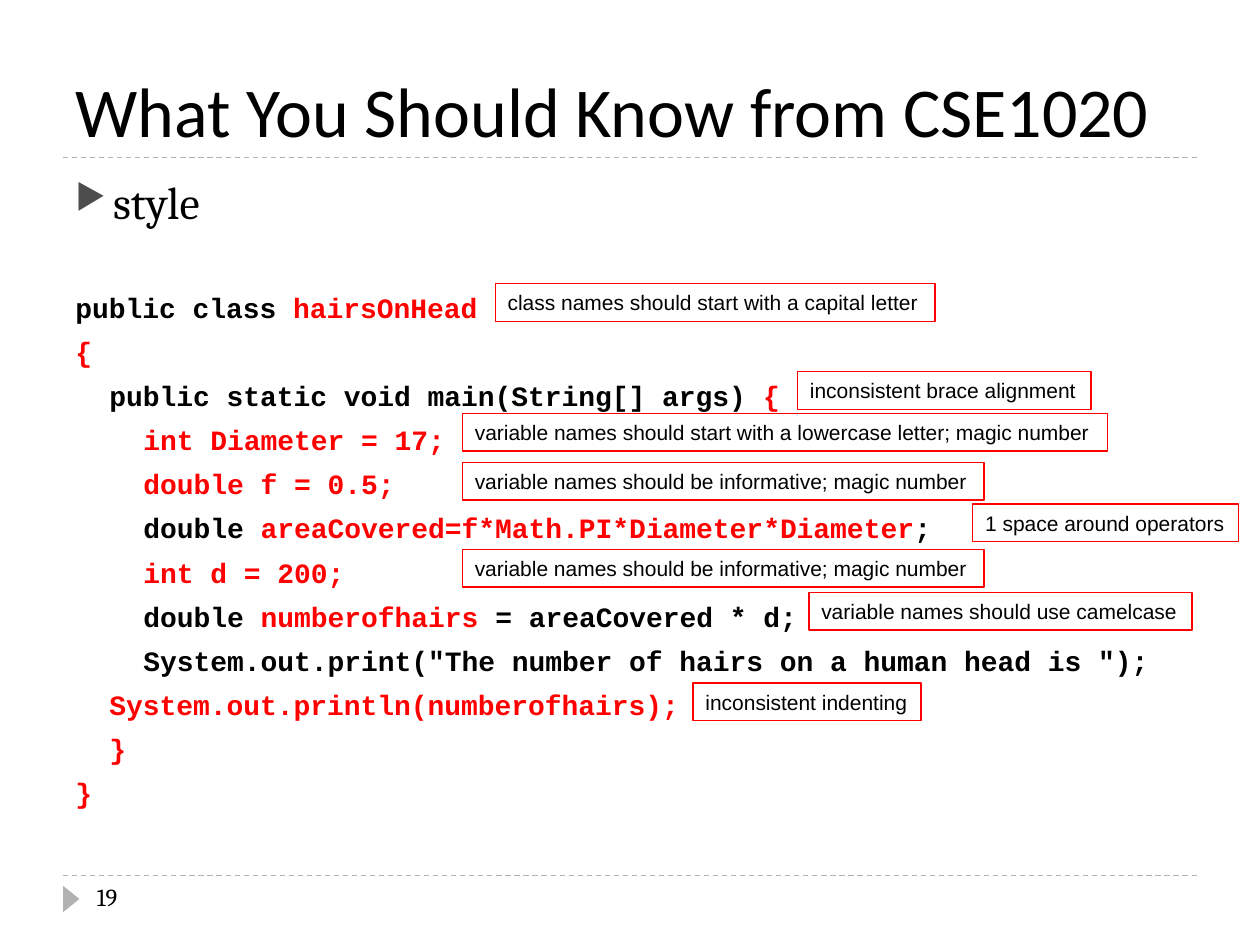
from lxml import etree
from pptx import Presentation
from pptx.dml.color import RGBColor
from pptx.enum.dml import MSO_LINE
from pptx.enum.shapes import MSO_CONNECTOR, MSO_SHAPE
from pptx.enum.text import MSO_ANCHOR, MSO_AUTO_SIZE, PP_ALIGN
from pptx.oxml.ns import qn
from pptx.util import Inches, Pt

DASH = MSO_LINE.DASH
LINE = MSO_CONNECTOR.STRAIGHT
RECT = MSO_SHAPE.RECTANGLE
TRIANGLE = MSO_SHAPE.ISOSCELES_TRIANGLE
LEFT = PP_ALIGN.LEFT

BLACK, RED, GREY, DARK = "000000", "FF0000", "B2B2B2", "4D4D4D"
TITLE = "What You Should Know from CSE1020"
TOPIC = "style"
PAGE = "19"

# Indent level, then text in turn black, red, black
CODE = [
    (0, "public class ", "hairsOnHead"),
    (0, "", "{"),
    (1, "public static void main(String[] args) ", "{"),
    (2, "", "int Diameter = 17;"),
    (2, "", "double f = 0.5;"),
    (2, "double ", "areaCovered=f*Math.PI*Diameter*Diameter", ";"),
    (2, "", "int d = 200;"),
    (2, "double ", "numberofhairs", " = areaCovered * d;"),
    (2, 'System.out.print("The number of hairs on a human head is ");'),
    (1, "", "System.out.println(numberofhairs);"),
    (1, "", "}"),
    (0, "", "}"),
]
VAGUE = "variable names should be informative; magic number"
# Left, top, width, text
NOTES = [
    (3.93, 2.25, 3.49, "class names should start with a capital letter"),
    (6.33, 2.95, 2.33, "inconsistent brace alignment"),
    (3.67, 3.28, 5.12,
     "variable names should start with a lowercase letter; magic number"),
    (3.67, 3.67, 4.14, VAGUE),
    (3.67, 4.36, 4.14, VAGUE),
    (6.42, 4.7, 3.04, "variable names should use camelcase"),
    (5.5, 5.42, 1.81, "inconsistent indenting"),
    (7.72, 4, 2.11, "1 space around operators"),
]
NOTE_H = 0.3
STEP = 0.27  # two characters of code
HANG = 0.3

TITLE_FONT = {"name": "Calibri", "size": Pt(40)}
TOPIC_FONT = {"name": "Cambria", "size": Pt(26)}
PAGE_FONT = {"name": "Cambria", "size": Pt(14)}
CODE_FONT = {"name": "Courier New", "size": Pt(16), "bold": True}
NOTE_FONT = {"name": "Arial", "size": Pt(12)}


def rgb(code):
    return RGBColor.from_string(code)


def box(*sides):
    return [Inches(side) for side in sides]


def write(para, text, font, color=BLACK):
    run = para.add_run()
    run.text = text
    for key, value in font.items():
        setattr(run.font, key, value)
    run.font.color.rgb = rgb(color)


def rule(slide, top):
    line = slide.shapes.add_connector(LINE, *box(0.5, top, 9.5, top))
    line.line.color.rgb = rgb(GREY)
    line.line.width = Pt(0.75)
    line.line.dash_style = DASH
    etree.SubElement(line._element.spPr, qn("a:effectLst"))


def bullet(para):
    props = para._p.get_or_add_pPr()
    props.set("marL", str(Inches(HANG)))
    props.set("indent", str(-Inches(HANG)))
    color = etree.SubElement(props, qn("a:buClr"))
    etree.SubElement(color, qn("a:srgbClr"), val=DARK)
    etree.SubElement(props, qn("a:buSzPct"), val="76000")
    etree.SubElement(props, qn("a:buChar"), char="▶")


def add_title(slide):
    title = slide.shapes.title
    title.left, title.top, title.width, title.height = box(0.5, 0.17, 9, 1.08)
    frame = title.text_frame
    frame.auto_size = MSO_AUTO_SIZE.NONE
    frame.vertical_anchor = MSO_ANCHOR.BOTTOM
    frame.paragraphs[0].alignment = LEFT
    write(frame.paragraphs[0], TITLE, TITLE_FONT)


def add_body(slide):
    frame = slide.shapes.add_textbox(*box(0.5, 1.33, 9, 5.4)).text_frame
    frame.word_wrap = True
    bullet(frame.paragraphs[0])
    write(frame.paragraphs[0], TOPIC, TOPIC_FONT)
    for row, (level, *parts) in enumerate(CODE):
        para = frame.add_paragraph()
        para.line_spacing = Pt(25.2)
        para.space_before = Pt(0 if row else 29.5)
        para._p.get_or_add_pPr().set("marL", str(Inches(level * STEP)))
        for part, color in zip(parts, (BLACK, RED, BLACK)):
            if part:
                write(para, part, CODE_FONT, color)


def add_note(slide, left, top, width, text):
    note = slide.shapes.add_shape(RECT, *box(left, top, width, NOTE_H))
    note.shadow.inherit = False
    note.fill.background()
    note.line.color.rgb = rgb(RED)
    note.line.width = Pt(0.75)
    frame = note.text_frame
    frame.word_wrap = False
    frame.paragraphs[0].alignment = LEFT
    write(frame.paragraphs[0], text, NOTE_FONT)


def add_footer(slide):
    mark = slide.shapes.add_shape(TRIANGLE, *box(0.46, 7.07, 0.21, 0.13))
    mark.rotation = 90
    mark.shadow.inherit = False
    mark.fill.solid()
    mark.fill.fore_color.rgb = rgb(GREY)
    mark.line.fill.background()
    frame = slide.shapes.add_textbox(*box(0.67, 6.95, 2.17, 0.4)).text_frame
    frame.word_wrap = True
    write(frame.paragraphs[0], PAGE, PAGE_FONT)


def main():
    deck = Presentation()
    deck.slide_width, deck.slide_height = box(10, 7.5)
    slide = deck.slides.add_slide(deck.slide_layouts[5])
    for top in (6.95, 1.25):
        rule(slide, top)
    add_title(slide)
    add_footer(slide)
    add_body(slide)
    for note in NOTES:
        add_note(slide, *note)
    deck.save("out.pptx")


if __name__ == "__main__":
    main()
